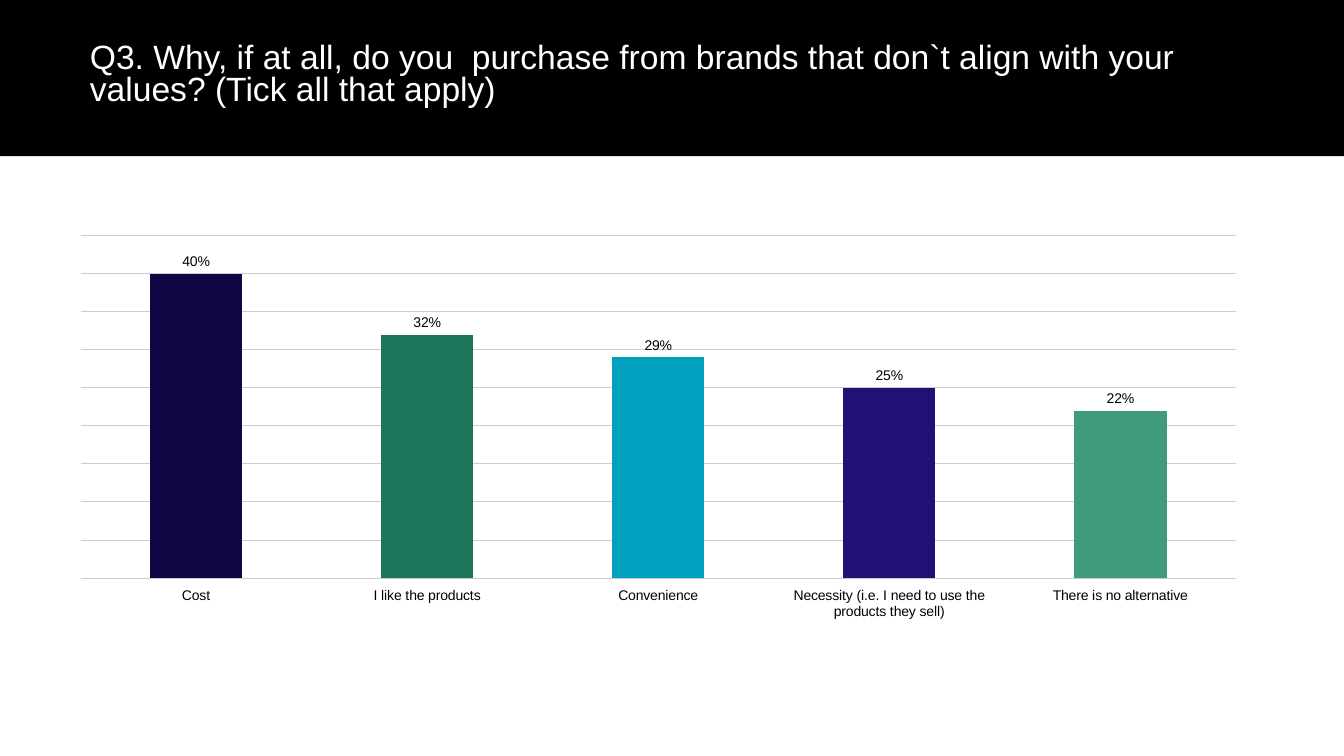
from lxml import etree
from pptx import Presentation
from pptx.chart.data import CategoryChartData
from pptx.dml.color import RGBColor
from pptx.enum.chart import XL_CHART_TYPE as ChartType
from pptx.enum.chart import XL_LABEL_POSITION as LabelPosition
from pptx.enum.chart import XL_TICK_LABEL_POSITION as TickLabelPosition
from pptx.enum.chart import XL_TICK_MARK as TickMark
from pptx.enum.shapes import MSO_SHAPE
from pptx.enum.text import MSO_ANCHOR, MSO_AUTO_SIZE, PP_ALIGN
from pptx.oxml.ns import qn
from pptx.util import Pt

COLOURS = {
    "black": "000000",
    "white": "FFFFFF",
    "grid": "CCCCCC",
    "navy": "0F0542",
    "green": "1B755A",
    "cyan": "00A0BE",
    "indigo": "211176",
    "sage": "409A7C",
}

REASONS = [
    ("Cost", 0.40, "navy"),
    ("I like the products", 0.32, "green"),
    ("Convenience", 0.29, "cyan"),
    ("Necessity (i.e. I need to use the products they sell)", 0.25, "indigo"),
    ("There is no alternative", 0.22, "sage"),
]


def colour(name):
    return RGBColor.from_string(COLOURS[name])


def write_text(frame, text, size=24, font="Arial", fill="white", spacing=0.8):
    frame.text = text
    frame.word_wrap = True
    frame.auto_size = MSO_AUTO_SIZE.NONE
    frame.vertical_anchor = MSO_ANCHOR.MIDDLE
    paragraph = frame.paragraphs[0]
    paragraph.alignment = PP_ALIGN.LEFT
    paragraph.line_spacing = spacing
    paragraph.space_before = Pt(0)
    paragraph.font.size = Pt(size)
    paragraph.font.name = font
    paragraph.font.color.rgb = colour(fill)


presentation = Presentation()
presentation.slide_width = Pt(960)
presentation.slide_height = Pt(540)
slide = presentation.slides.add_slide(presentation.slide_layouts[5])

# Header band, placed behind the title
title = slide.shapes.title
band = slide.shapes.add_shape(MSO_SHAPE.RECTANGLE, 0, 0, Pt(960), Pt(111.6))
band.shadow.inherit = False
band.fill.solid()
band.fill.fore_color.rgb = colour("black")
band.line.fill.background()
title.element.addprevious(band.element)

title.left, title.top, title.width, title.height = Pt(57), Pt(25.2), Pt(826.5), Pt(57.6)
write_text(
    title.text_frame,
    "Q3. Why, if at all, do you  purchase from brands that don`t align with your "
    "values? (Tick all that apply)",
)

# Column chart of reasons
chart_data = CategoryChartData(number_format="0%")
chart_data.categories = [reason for reason, share, fill in REASONS]
chart_data.add_series("Series 1", [share for reason, share, fill in REASONS])
chart = slide.shapes.add_chart(
    ChartType.COLUMN_CLUSTERED, Pt(40.3), Pt(162.7), Pt(859.7), Pt(284.4), chart_data
).chart
chart.has_title = False
chart.has_legend = False
chart.font.size = Pt(12)
chart.font.name = "Calibri"
chart.font.color.rgb = colour("black")

value_axis = chart.value_axis
value_axis.minimum_scale = 0
value_axis.maximum_scale = 0.45
value_axis.major_unit = 0.05
value_axis.visible = False
value_axis.has_major_gridlines = True
gridline = value_axis.major_gridlines.format.line
gridline.color.rgb = colour("grid")
gridline.width = Pt(0.75)

category_axis = chart.category_axis
category_axis.major_tick_mark = TickMark.NONE
category_axis.minor_tick_mark = TickMark.NONE
category_axis.tick_label_position = TickLabelPosition.LOW
category_axis.format.line.fill.background()

plot = chart.plots[0]
plot.gap_width = 150
plot.vary_by_categories = False
plot.has_data_labels = True
labels = plot.data_labels
labels.show_value = True
labels.number_format = "0%"
labels.number_format_is_linked = False
labels.position = LabelPosition.OUTSIDE_END

for font in (category_axis.tick_labels.font, labels.font):
    font.size = Pt(10)
    font.name = "Arial"
    font.color.rgb = colour("black")

for index, (reason, share, fill) in enumerate(REASONS):
    column = plot.series[0].points[index].format
    column.fill.solid()
    column.fill.fore_color.rgb = colour(fill)
    column.line.fill.background()

# Fixed inner plot area, as fractions of the chart
plot_area = chart.element.find(".//" + qn("c:plotArea"))
layout = plot_area.find(qn("c:layout"))
if layout is None:
    layout = etree.Element(qn("c:layout"))
    plot_area.insert(0, layout)
manual = etree.SubElement(layout, qn("c:manualLayout"))
for tag, value in [
    ("layoutTarget", "inner"),
    ("xMode", "edge"),
    ("yMode", "edge"),
    ("x", "0.02"),
    ("y", "0.02"),
    ("w", "0.96"),
    ("h", "0.86"),
]:
    etree.SubElement(manual, qn("c:" + tag)).set("val", value)

presentation.save("out.pptx")
